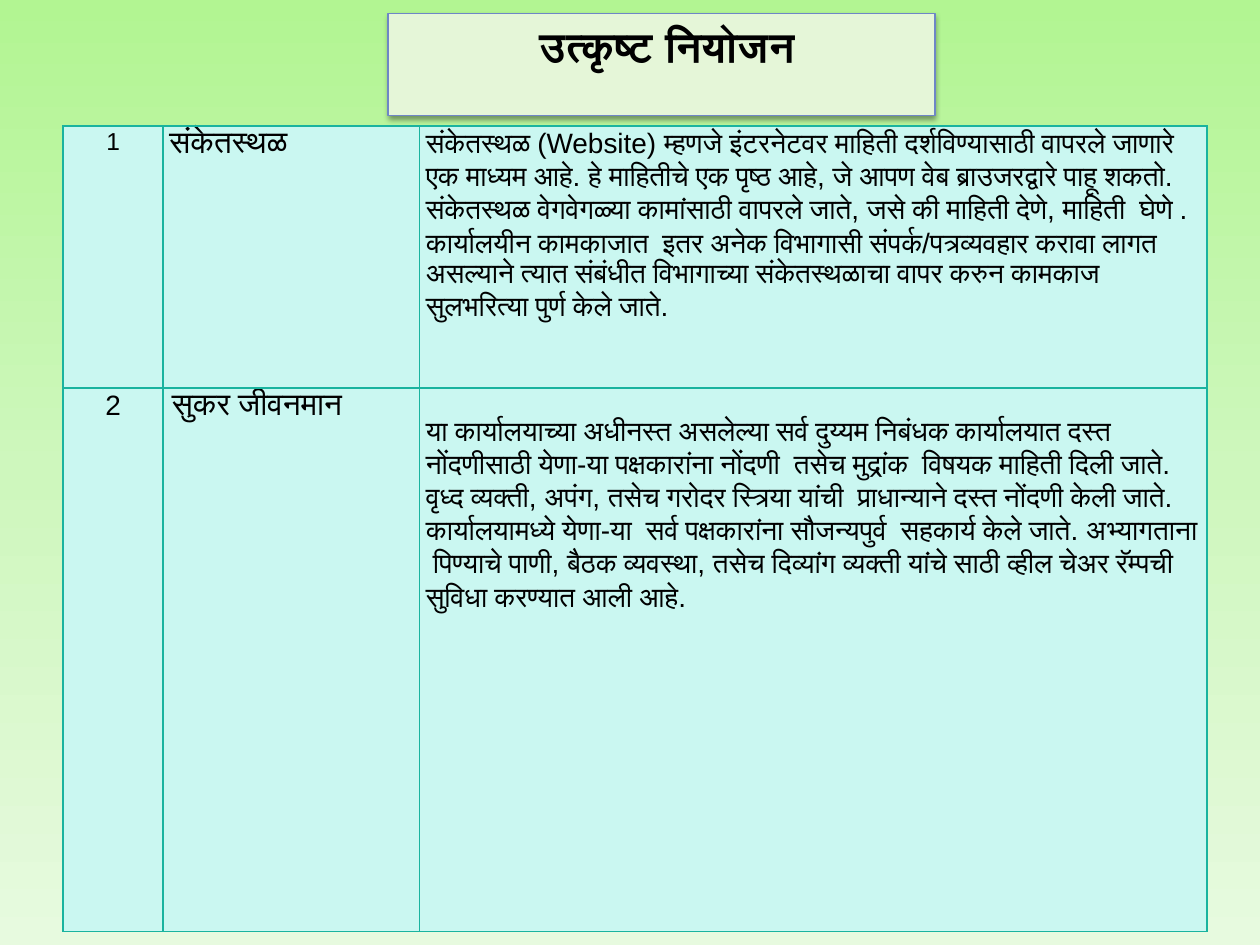
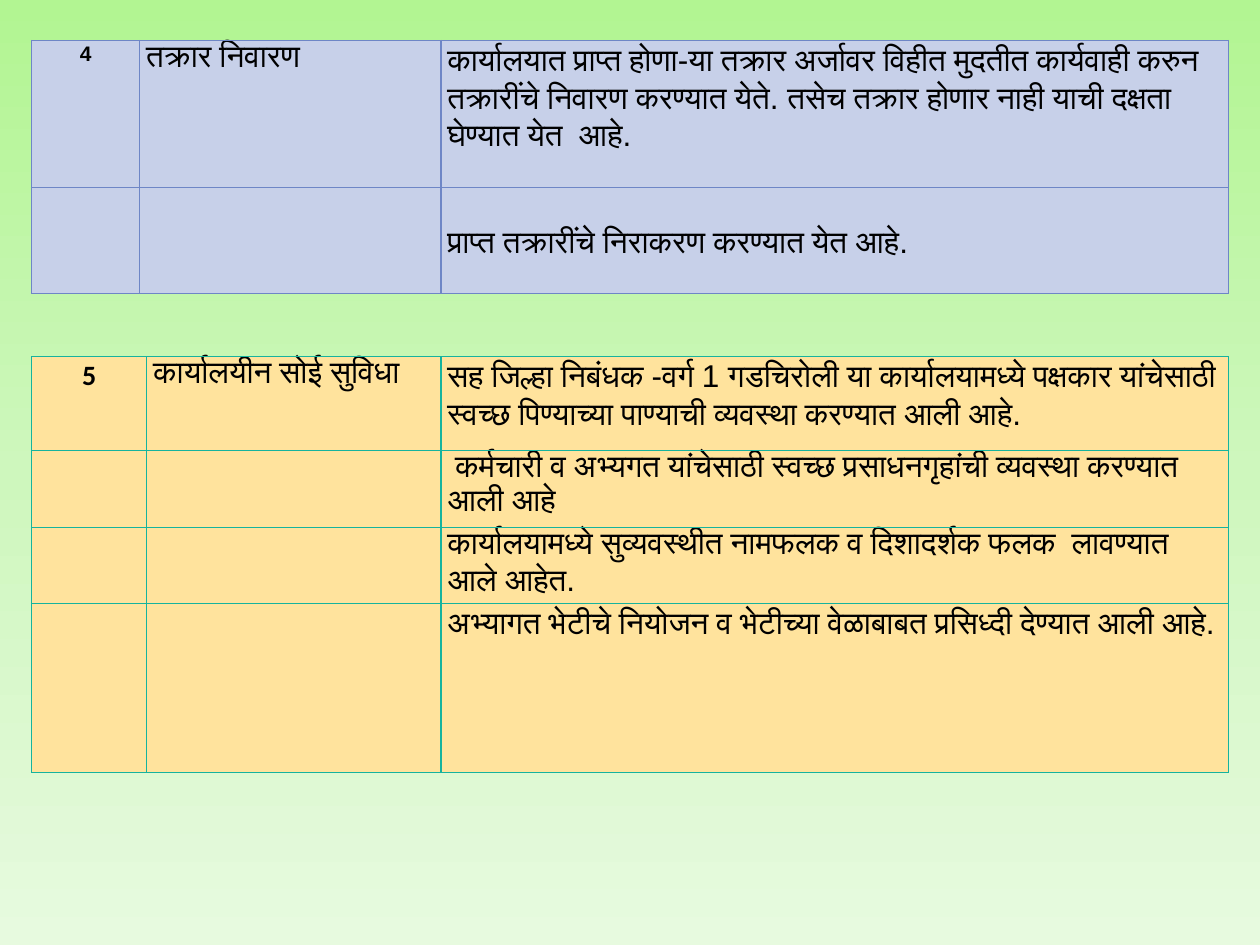
from copy import deepcopy
from dataclasses import dataclass

from lxml.etree import SubElement
from pptx import Presentation
from pptx.dml.color import RGBColor
from pptx.enum.text import MSO_ANCHOR, MSO_AUTO_SIZE, PP_ALIGN
from pptx.oxml.ns import qn
from pptx.util import Inches, Pt


@dataclass(frozen=True)
class Theme:
    sky: tuple = ("B2F592", "CEF7BD", "E7FADF")
    ink: str = "000000"
    title_fill: str = "E5F6D8"
    aqua: str = "CAF7F1"
    lilac: str = "C7D0E9"
    amber: str = "FFE39D"
    blue: str = "6E86C6"
    teal: str = "1AB39F"
    sea: str = "16B39E"
    sans: str = "Arial"
    round: str = "Calibri"
    title: float = 24
    large: float = 18
    body: float = 16
    small: float = 14
    tiny: float = 12
    thin: float = 0.75
    leading: float = 1.07


@dataclass(frozen=True)
class Entry:
    text: str
    size: float
    bold: bool = False
    font: str = Theme.sans
    center: bool = False
    drop: float = 0
    indent: float = 0.05


@dataclass(frozen=True)
class Sheet:
    left: float
    top: float
    cols: tuple
    rows: tuple
    fill: str
    line: str
    weight: float
    cells: tuple


THEME = Theme()
UNIT = 0.25
COLS, ROWS = 40, 30


def grid(count: float) -> int:
    return Inches(count * UNIT)


def rgb(code: str) -> RGBColor:
    return RGBColor.from_string(code)


def paint(parent, code: str, alpha: int = 100) -> None:
    color = SubElement(parent, qn("a:srgbClr"), val=code)
    if alpha < 100:
        SubElement(color, qn("a:alpha"), val=str(alpha * 1000))


def style(para, size: float, bold: bool, face: str) -> None:
    for run in para.runs:
        font = run.font
        font.size, font.bold, font.name = Pt(size), bold, face
        font.color.rgb = rgb(THEME.ink)


def shade(master) -> None:
    fill = master.background.fill
    fill.gradient()
    fill.gradient_angle = 270
    stops = master.element.find(".//" + qn("a:gsLst"))
    stops.append(deepcopy(stops[0]))
    for spot, (stop, code) in enumerate(zip(fill.gradient_stops, THEME.sky)):
        stop.position = spot / 2
        stop.color.rgb = rgb(code)


def head(slide, text: str) -> None:
    box = slide.shapes.title
    box.left, box.top = grid(12.32), grid(0.44)
    box.width, box.height = grid(17.36), grid(3.24)
    box.fill.solid()
    box.fill.fore_color.rgb = rgb(THEME.title_fill)
    box.line.color.rgb = rgb(THEME.blue)
    box.line.width = Pt(THEME.thin)
    effects = SubElement(box._element.spPr, qn("a:effectLst"))
    shadow = SubElement(effects, qn("a:outerShdw"), blurRad=str(Pt(3.1)),
                        dist=str(Pt(1.6)), dir="5400000", rotWithShape="0")
    paint(shadow, THEME.ink, 38)
    frame = box.text_frame
    frame.text = text
    frame.auto_size = MSO_AUTO_SIZE.NONE
    frame.vertical_anchor = MSO_ANCHOR.TOP
    frame.paragraphs[0].alignment = PP_ALIGN.CENTER
    style(frame.paragraphs[0], THEME.title, True, THEME.sans)


def edge(cell, code: str, weight: float) -> None:
    props = cell._tc.get_or_add_tcPr()
    for side in ("L", "R", "T", "B"):
        line = SubElement(props, qn(f"a:ln{side}"), w=str(Pt(weight)))
        paint(SubElement(line, qn("a:solidFill")), code)


def write(cell, entry: Entry) -> None:
    cell.margin_left, cell.margin_right = Inches(entry.indent), Inches(0.05)
    cell.margin_top, cell.margin_bottom = Inches(entry.drop), 0
    cell.text_frame.text = entry.text
    for para in cell.text_frame.paragraphs:
        para.line_spacing = THEME.leading
        para.alignment = PP_ALIGN.CENTER if entry.center else PP_ALIGN.LEFT
        style(para, entry.size, entry.bold, entry.font)


def draw(slide, sheet: Sheet) -> None:
    table = slide.shapes.add_table(
        len(sheet.rows), len(sheet.cols), grid(sheet.left), grid(sheet.top),
        grid(sum(sheet.cols)), grid(sum(sheet.rows))).table
    table.first_row = table.horz_banding = False
    for col, width in zip(table.columns, sheet.cols):
        col.width = grid(width)
    for row, height, entries in zip(table.rows, sheet.rows, sheet.cells):
        row.height = grid(height)
        for cell, entry in zip(row.cells, entries):
            edge(cell, sheet.line, sheet.weight)
            cell.fill.solid()
            cell.fill.fore_color.rgb = rgb(sheet.fill)
            if entry:
                write(cell, entry)


PLAN = Sheet(
    2, 4, (3.18, 8.14, 25), (8.32, 17.26), THEME.aqua, THEME.teal, 1,
    (
        (
            Entry("1", THEME.small, center=True),
            Entry("संकेतस्थळ", THEME.large),
            Entry(
                "संकेतस्थळ (Website) म्हणजे इंटरनेटवर माहिती दर्शविण्यासाठी वापरले जाणारे "
                "एक माध्यम आहे. हे माहितीचे एक पृष्ठ आहे, जे आपण वेब ब्राउजरद्वारे पाहू "
                "शकतो. संकेतस्थळ वेगवेगळ्या कामांसाठी वापरले जाते, जसे की माहिती देणे, "
                "माहिती  घेणे .\n"
                "कार्यालयीन कामकाजात  इतर अनेक विभागासी संपर्क/पत्रव्यवहार करावा लागत "
                "असल्याने त्यात संबंधीत विभागाच्या संकेतस्थळाचा वापर करुन कामकाज "
                "सुलभरित्या पुर्ण केले जाते.",
                THEME.body),
        ),
        (
            Entry("2", THEME.body, center=True),
            Entry("सुकर जीवनमान", THEME.large, indent=0.07),
            Entry(
                "या कार्यालयाच्या अधीनस्त असलेल्या सर्व दुय्यम निबंधक कार्यालयात दस्त "
                "नोंदणीसाठी येणा-या पक्षकारांना नोंदणी  तसेच मुद्रांक  विषयक माहिती दिली जाते. "
                "वृध्द व्यक्ती, अपंग, तसेच गरोदर स्त्रिया यांची  प्राधान्याने दस्त नोंदणी केली जाते. "
                "कार्यालयामध्ये येणा-या  सर्व पक्षकारांना सौजन्यपुर्व  सहकार्य केले जाते. अभ्यागताना  "
                "पिण्याचे पाणी, बैठक व्यवस्था, तसेच दिव्यांग व्यक्ती यांचे साठी व्हील चेअर रॅम्पची "
                "सुविधा करण्यात आली आहे.",
                THEME.body, drop=0.23),
        ),
    ),
)

CLAIMS = Sheet(
    1, 1.28, (3.44, 9.56, 25), (4.68, 3.36), THEME.lilac, THEME.blue, THEME.thin,
    (
        (
            Entry("4", THEME.tiny, True, center=True),
            Entry("तक्रार निवारण", THEME.large),
            Entry(
                "कार्यालयात प्राप्त होणा-या तक्रार अर्जावर विहीत मुदतीत कार्यवाही करुन "
                "तक्रारींचे निवारण करण्यात येते. तसेच तक्रार होणार नाही याची दक्षता "
                "घेण्यात येत  आहे.",
                THEME.large),
        ),
        (
            None,
            None,
            Entry("प्राप्त तक्रारींचे निराकरण करण्यात येत आहे.", THEME.large, drop=0.28),
        ),
    ),
)

COMFORTS = Sheet(
    1, 11.32, (3.66, 9.34, 25), (2.98, 2.44, 2.42, 5.36),
    THEME.amber, THEME.sea, THEME.thin,
    (
        (
            Entry("5", THEME.body, True, THEME.round, center=True),
            Entry("कार्यालयीन सोई सुविधा", THEME.large),
            Entry(
                "सह जिल्हा निबंधक -वर्ग 1 गडचिरोली या कार्यालयामध्ये पक्षकार यांचेसाठी "
                "स्वच्छ पिण्याच्या पाण्याची व्यवस्था करण्यात आली आहे.",
                THEME.large),
        ),
        (
            None,
            None,
            Entry(
                " कर्मचारी व अभ्यगत यांचेसाठी स्वच्छ प्रसाधनगृहांची व्यवस्था करण्यात "
                "आली आहे",
                THEME.large),
        ),
        (
            None,
            None,
            Entry(
                "कार्यालयामध्ये सुव्यवस्थीत नामफलक व दिशादर्शक फलक  लावण्यात "
                "आले आहेत.",
                THEME.large),
        ),
        (
            None,
            None,
            Entry(
                "अभ्यागत भेटीचे नियोजन व भेटीच्या वेळाबाबत प्रसिध्दी देण्यात आली आहे.",
                THEME.large),
        ),
    ),
)


def main() -> None:
    deck = Presentation()
    deck.slide_width, deck.slide_height = grid(COLS), grid(ROWS)
    shade(deck.slide_master)
    titled, blank = deck.slide_layouts[5], deck.slide_layouts[6]

    first = deck.slides.add_slide(titled)
    head(first, " उत्कृष्ट नियोजन")
    draw(first, PLAN)

    second = deck.slides.add_slide(blank)
    for sheet in (CLAIMS, COMFORTS):
        draw(second, sheet)

    deck.save("out.pptx")


if __name__ == "__main__":
    main()
